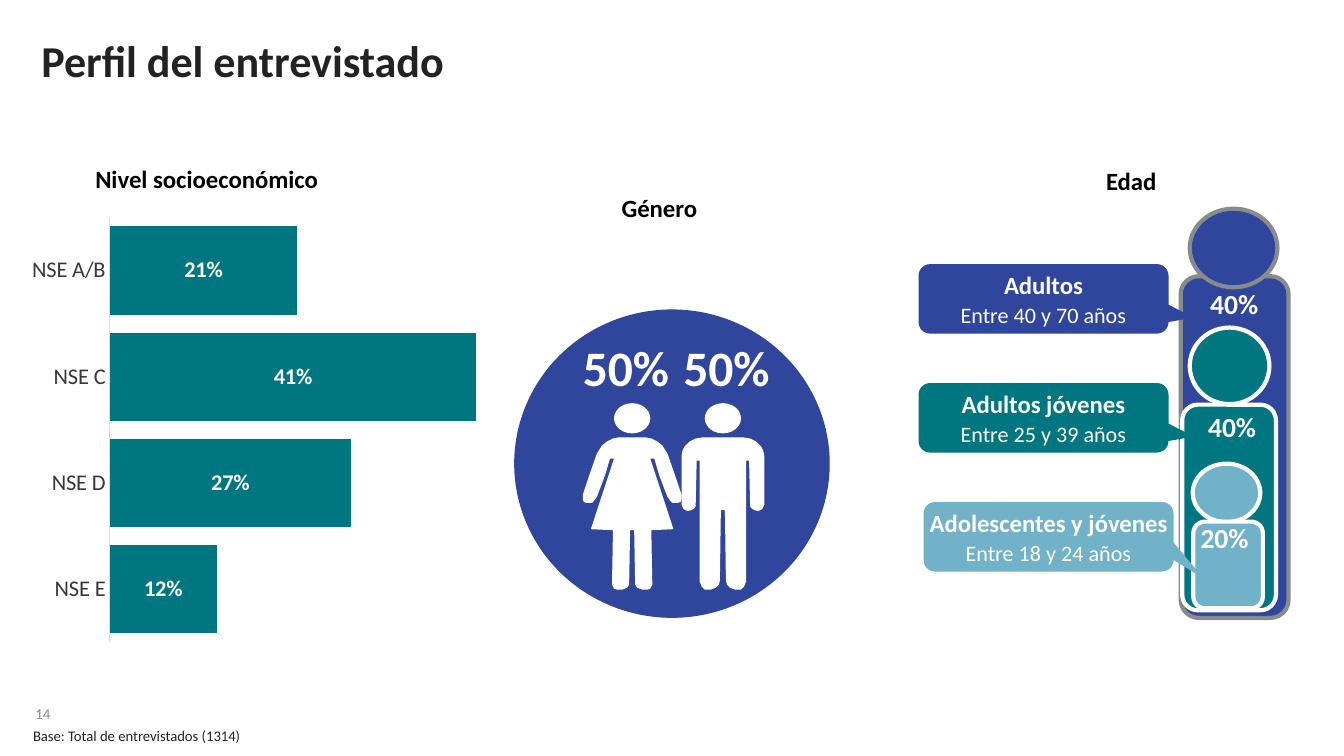
from pptx import Presentation
from pptx.chart.data import CategoryChartData
from pptx.dml.color import RGBColor
from pptx.enum.chart import XL_CHART_TYPE, XL_LABEL_POSITION, XL_TICK_MARK
from pptx.enum.shapes import MSO_SHAPE
from pptx.enum.text import MSO_ANCHOR, MSO_AUTO_SIZE, PP_ALIGN
from pptx.util import Inches, Pt

COLORS = {
    "blue": "2F469C", "teal": "007681", "sky": "71B2C9", "white": "FFFFFF",
    "gray": "888B8D", "ink": "222223", "axis_text": "383839",
    "axis_line": "DDDDDE", "black": "000000",
}
COLORS = {name: RGBColor.from_string(value) for name, value in COLORS.items()}


def style_text(para, size, color, bold=False, align=PP_ALIGN.LEFT):
    para.alignment = align
    for span in para.runs:
        span.font.name = "Calibri"
        span.font.size = Pt(size)
        span.font.bold = bold
        span.font.color.rgb = COLORS[color]


def paint(shape, fill, line=None):
    shape.shadow.inherit = False
    shape.fill.solid()
    shape.fill.fore_color.rgb = COLORS[fill]
    if line:
        shape.line.color.rgb = COLORS[line]
        shape.line.width = Pt(3)
    else:
        shape.line.fill.background()


deck = Presentation()
deck.slide_width, deck.slide_height = Inches(13.33), Inches(7.5)
page = deck.slides.add_slide(deck.slide_layouts[5])

# Title
title = page.shapes.title
title.left, title.top, title.width, title.height = map(Inches, (0.41, 0.39, 8.04, 0.48))
frame = title.text_frame
frame.text = "Perfil del entrevistado"
frame.auto_size = MSO_AUTO_SIZE.NONE
frame.vertical_anchor = MSO_ANCHOR.TOP
frame.margin_left = frame.margin_right = frame.margin_top = frame.margin_bottom = 0
frame.paragraphs[0].line_spacing = 0.9
style_text(frame.paragraphs[0], 31.5, "ink", True)

# Gender: circle with two mirrored figures
circle = page.shapes.add_shape(
    MSO_SHAPE.OVAL, Inches(5.1), Inches(3.07), Inches(3.13), Inches(3.06))
paint(circle, "blue")

# Right half of each body: distance from its centre line, height on the slide
woman_half = [
    (0, 4.34), (0.14, 4.34), (0.19, 4.35), (0.25, 4.38), (0.3, 4.42), (0.35, 4.5),
    (0.42, 4.7), (0.49, 4.91), (0.49, 4.95), (0.48, 4.98), (0.45, 4.99), (0.4, 4.99),
    (0.38, 4.97), (0.35, 4.93), (0.27, 4.72), (0.22, 4.55), (0.18, 4.55),
    (0.41, 5.25), (0.19, 5.26), (0.2, 5.8), (0.18, 5.84), (0.15, 5.85),
    (0.1, 5.85), (0.05, 5.83), (0.03, 5.8), (0.02, 5.26)]
man_half = [
    (0, 4.34), (0.21, 4.34), (0.27, 4.35), (0.33, 4.38), (0.38, 4.43), (0.4, 4.47),
    (0.41, 4.52), (0.41, 5.01), (0.39, 5.05), (0.35, 5.07), (0.31, 5.06),
    (0.28, 5.04), (0.27, 5.02), (0.26, 4.57), (0.23, 4.57), (0.23, 5.77),
    (0.21, 5.82), (0.18, 5.85), (0.12, 5.85), (0.07, 5.83), (0.04, 5.8),
    (0.03, 5.76), (0.02, 5.06)]
for center, half in ((7.17, man_half), (6.27, woman_half)):
    figure = page.shapes.add_group_shape()
    head = figure.shapes.add_shape(
        MSO_SHAPE.OVAL, Inches(center - 0.18), Inches(4), Inches(0.36), Inches(0.3))
    paint(head, "white")
    outline = half + [(-x, y) for x, y in reversed(half)]
    points = [(Inches(center + x), Inches(y)) for x, y in outline]
    builder = figure.shapes.build_freeform(*points[0])
    builder.add_line_segments(points[1:], close=True)
    paint(builder.convert_to_shape(), "white")

# Socioeconomic level chart
data = CategoryChartData(number_format="0%")
data.categories = ["NSE A/B", "NSE C", "NSE D", "NSE E"]
data.add_series("Series 1", (0.21, 0.41, 0.27, 0.12))
chart = page.shapes.add_chart(
    XL_CHART_TYPE.BAR_CLUSTERED, Inches(0.22), Inches(2.07),
    Inches(4.96), Inches(4.39), data).chart
chart.has_legend = chart.has_title = False
chart.font.name, chart.font.size = "Calibri", Pt(10)
chart.font.color.rgb = COLORS["ink"]

categories = chart.category_axis
categories.reverse_order = True
categories.major_tick_mark = categories.minor_tick_mark = XL_TICK_MARK.NONE
categories.has_major_gridlines = False
categories.format.line.color.rgb = COLORS["axis_line"]
categories.format.line.width = Pt(0.75)
categories.tick_labels.font.name = "Calibri"
categories.tick_labels.font.size = Pt(16)
categories.tick_labels.font.color.rgb = COLORS["axis_text"]

values = chart.value_axis
values.visible = False
values.has_major_gridlines = False
values.minimum_scale, values.maximum_scale = 0, 0.45

plot = chart.plots[0]
plot.gap_width = 20
plot.vary_by_categories = False
bars = plot.series[0]
bars.format.fill.solid()
bars.format.fill.fore_color.rgb = COLORS["teal"]
labels = bars.data_labels
labels.show_value = True
labels.position = XL_LABEL_POSITION.CENTER
labels.number_format, labels.number_format_is_linked = "0%", False
labels.font.name, labels.font.size, labels.font.bold = "Calibri", Pt(16), True
labels.font.color.rgb = COLORS["white"]

# Age: nested figures, bodies turned a quarter
for kind, left, top, width, height, fill, line in (
    (MSO_SHAPE.ROUNDED_RECTANGLE, 10.55, 3.9, 3.39, 1.07, "blue", "gray"),
    (MSO_SHAPE.OVAL, 11.8, 3.25, 0.79, 0.76, "teal", "white"),
    (MSO_SHAPE.ROUNDED_RECTANGLE, 11.17, 4.57, 2.04, 0.93, "teal", "white"),
    (MSO_SHAPE.OVAL, 11.83, 4.6, 0.67, 0.58, "sky", "white"),
    (MSO_SHAPE.ROUNDED_RECTANGLE, 11.75, 5.26, 0.86, 0.69, "sky", "white"),
    (MSO_SHAPE.OVAL, 11.8, 2.07, 0.87, 0.78, "blue", "gray"),
):
    part = page.shapes.add_shape(
        kind, Inches(left), Inches(top), Inches(width), Inches(height))
    paint(part, fill, line)
    if kind == MSO_SHAPE.ROUNDED_RECTANGLE:
        part.rotation = 90

# Age callouts
for left, top, tip, fill, group, ages in (
    (9.16, 4.98, (0.62, 0.6), "sky", "Adolescentes y jóvenes", "Entre 18 y 24 años"),
    (9.11, 3.8, (0.6, 0.27), "teal", "Adultos jóvenes", "Entre 25 y 39 años"),
    (9.11, 2.62, (0.6, 0.27), "blue", "Adultos", "Entre 40 y 70 años"),
):
    callout = page.shapes.add_shape(
        MSO_SHAPE.ROUNDED_RECTANGULAR_CALLOUT,
        Inches(left), Inches(top), Inches(2.48), Inches(0.69))
    paint(callout, fill)
    callout.adjustments[0], callout.adjustments[1] = tip
    frame = callout.text_frame
    frame.text = f"{group}\n{ages}"
    frame.vertical_anchor = MSO_ANCHOR.MIDDLE
    frame.margin_left = frame.margin_right = 0
    name_para, ages_para = frame.paragraphs
    style_text(name_para, 17.7, "white", True, PP_ALIGN.CENTER)
    style_text(ages_para, 15.8, "white", False, PP_ALIGN.CENTER)
    ages_para.space_before = Pt(1.6)

# Headings, percentages, base note and page number
left_side, centered = PP_ALIGN.LEFT, PP_ALIGN.CENTER
for text, left, top, width, height, size, color, bold, align, margins in (
    ("50%", 5.78, 3.34, 0.89, 0.6, 35.4, "white", True, left_side, (0, 0)),
    ("50%", 6.76, 3.34, 0.89, 0.6, 35.4, "white", True, centered, (0, 0)),
    ("Nivel socioeconómico", 0.8, 1.62, 2.5, 0.3, 17.7, "black", True, centered, (0, 0)),
    ("Género", 5.29, 1.91, 2.5, 0.3, 17.7, "black", True, centered, (0, 0)),
    ("Edad", 9.97, 1.64, 2.5, 0.3, 17.7, "black", True, centered, (0, 0)),
    ("40%", 12, 2.8, 0.48, 0.43, 19.7, "white", True, centered, (0, 0.05)),
    ("40%", 11.98, 4.02, 0.48, 0.43, 19.7, "white", True, centered, (0, 0.05)),
    ("20%", 11.87, 5.12, 0.55, 0.43, 19.7, "white", True, centered, (0, 0.05)),
    ("Base: Total de entrevistados (1314)", 0.23, 7.16, 2.36, 0.2, 10.5, "ink",
     False, left_side, (0.1, 0.05)),
    ("14", 0.35, 6.99, 0.45, 0.19, 10.7, "gray", False, left_side, (0, 0)),
):
    box = page.shapes.add_textbox(
        Inches(left), Inches(top), Inches(width), Inches(height))
    frame = box.text_frame
    frame.text = text
    frame.word_wrap = text != "40%"
    frame.margin_left = frame.margin_right = Inches(margins[0])
    frame.margin_top = frame.margin_bottom = Inches(margins[1])
    style_text(frame.paragraphs[0], size, color, bold, align)

deck.save("out.pptx")
